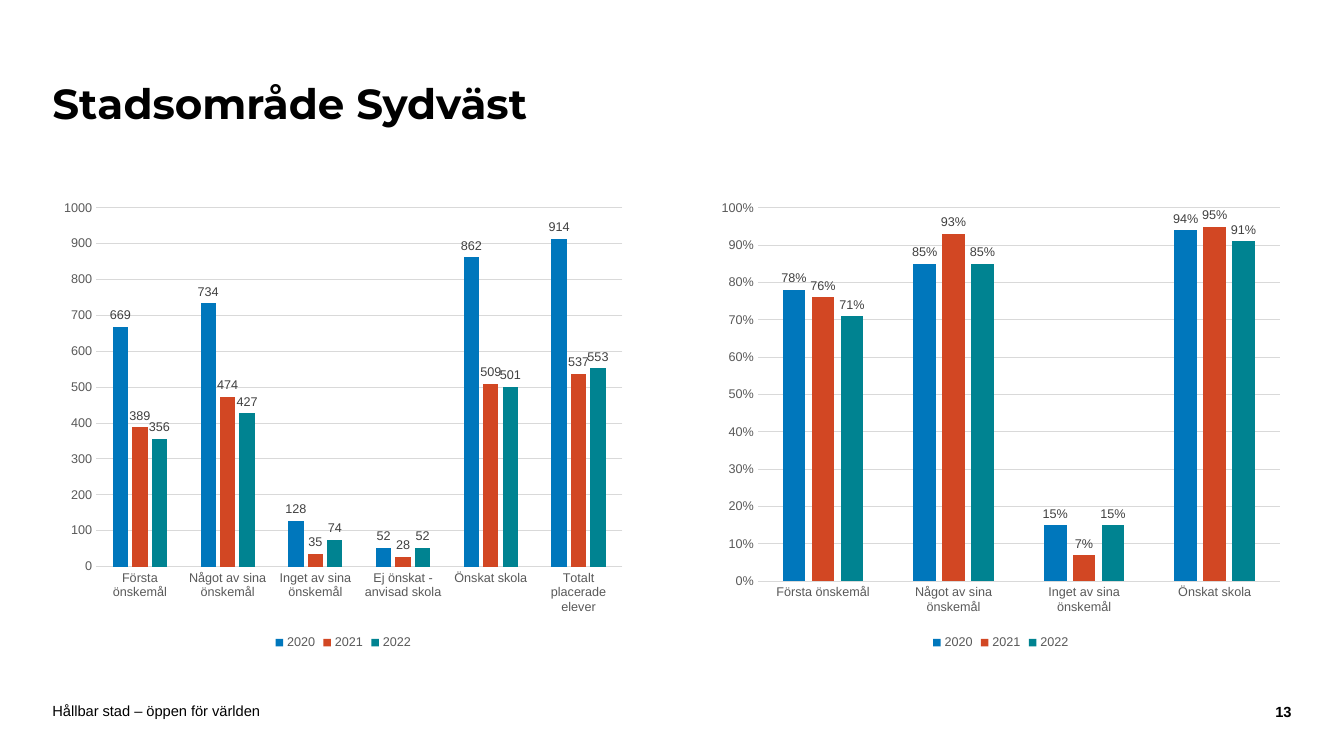
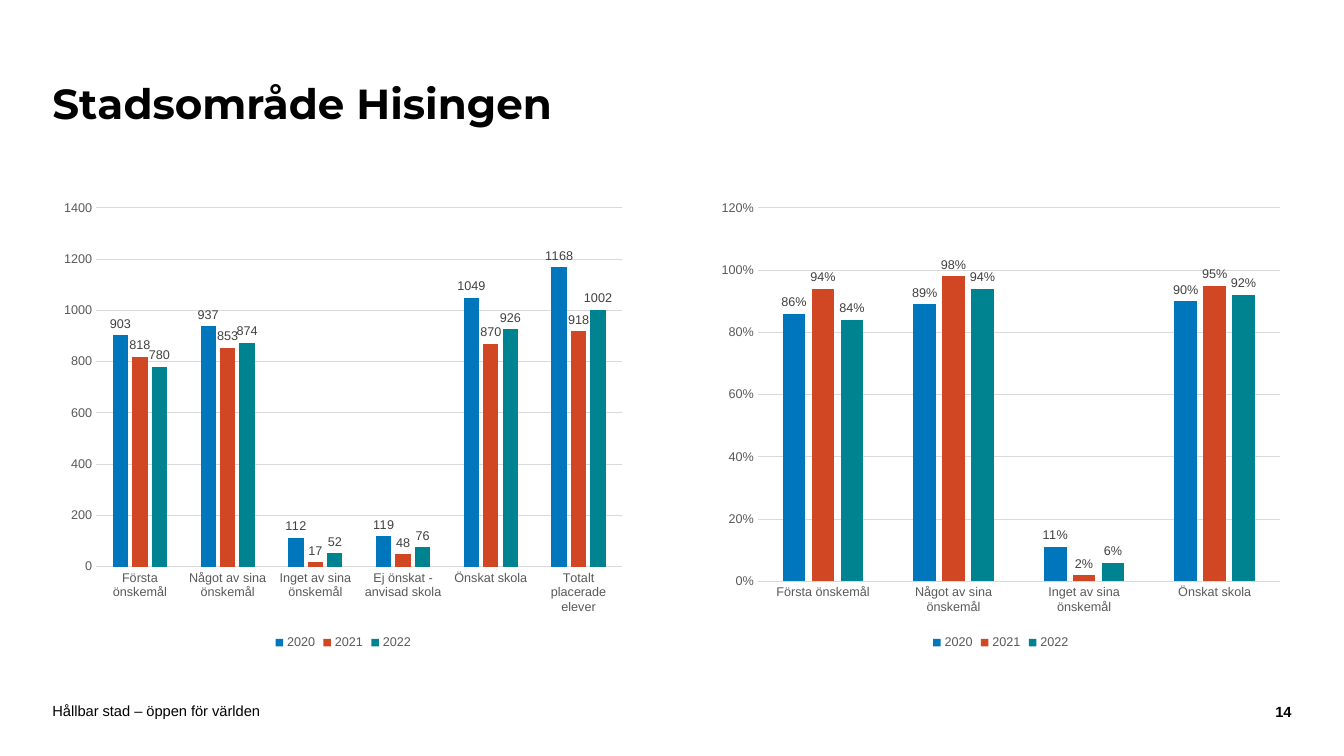
import pptx
import pptx.util
import pptx.chart.data
import pptx.dml.color
import pptx.enum.chart
import pptx.enum.text

# Shared style; lengths are percent of the slide's width or height
EDGE, GAP = 3.9, 5.64
COL = (100 - 2 * EDGE - GAP) / 2
YEARS = {"2020": "0077BC", "2021": "D24723", "2022": "008391"}
GRID = "D9D9D9"
BODY = "Arial"
TITLE = {"size": 30, "bold": True, "name": "Montserrat", "color": "000000"}
FOOT = {"size": 10.5, "bold": False, "name": BODY, "color": "000000"}
PAGE = {**FOOT, "bold": True}
AXIS = {"size": 9, "bold": False, "name": BODY, "color": "595959"}
LABEL = {**AXIS, "color": "404040"}
FOOTER = "Hållbar stad – öppen för världen"
FIRST = 13

WISHES = ["Första önskemål", "Något av sina önskemål", "Inget av sina önskemål"]
COUNTS = WISHES + ["Ej önskat - anvisad skola", "Önskat skola",
                   "Totalt placerade elever"]
SHARES = WISHES + ["Önskat skola"]

# Per slide: title, then (top of axis, step, rows by year) for each chart
AREAS = [
    ("Stadsområde Sydväst",
     (1000, 100, [[669, 734, 128, 52, 862, 914],
                  [389, 474, 35, 28, 509, 537],
                  [356, 427, 74, 52, 501, 553]]),
     (1, 0.1, [[0.78, 0.85, 0.15, 0.94],
               [0.76, 0.93, 0.07, 0.95],
               [0.71, 0.85, 0.15, 0.91]])),
    ("Stadsområde Hisingen",
     (1400, 200, [[903, 937, 112, 119, 1049, 1168],
                  [818, 853, 17, 48, 870, 918],
                  [780, 874, 52, 76, 926, 1002]]),
     (1.2, 0.2, [[0.86, 0.89, 0.11, 0.9],
                 [0.94, 0.98, 0.02, 0.95],
                 [0.84, 0.94, 0.06, 0.92]])),
]


def paint(text):
    return pptx.dml.color.RGBColor.from_string(text)


def assign(item, values):
    for key, value in values.items():
        setattr(item, key, value)


def style(font, look):
    for key, value in look.items():
        if key == "color":
            font.color.rgb = paint(value)
        else:
            setattr(font, key, pptx.util.Pt(value) if key == "size" else value)


class Deck:
    def __init__(self):
        self.file = pptx.Presentation()
        assign(self.file, {"slide_width": pptx.util.Inches(13.33),
                           "slide_height": pptx.util.Inches(7.5)})
        self.slide = None

    def place(self, left, top, width, height):
        wide, high = self.file.slide_width, self.file.slide_height
        return [round(part * full / 100) for part, full in
                zip((left, top, width, height), (wide, high, wide, high))]

    def text(self, words, look, area, align="LEFT", inset=0, lines=1):
        frame = self.slide.shapes.add_textbox(*self.place(*area)).text_frame
        pad = pptx.util.Inches(inset)
        assign(frame, {"word_wrap": True, "margin_left": 0, "margin_right": 0,
                       "margin_top": pad, "margin_bottom": pad,
                       "vertical_anchor": pptx.enum.text.MSO_ANCHOR.MIDDLE})
        line = frame.paragraphs[0]
        assign(line, {"alignment": pptx.enum.text.PP_ALIGN[align],
                      "line_spacing": lines})
        run = line.add_run()
        run.text = words
        style(run.font, look)

    def page(self, title):
        self.slide = self.file.slides.add_slide(self.file.slide_layouts[6])
        number = FIRST + len(self.file.slides) - 1
        self.text(str(number), PAGE, (100 - EDGE - 4.8, 93.1, 4.8, 2.1), "RIGHT")
        self.text(FOOTER, FOOT, (EDGE, 92.9, 70.9, 2.1))
        self.text(title, TITLE, (EDGE, 5.6, 75.2, 16.8), inset=0.05, lines=0.9)

    def chart(self, col, cats, form, top, step, rows):
        data = pptx.chart.data.CategoryChartData(number_format=form)
        data.categories = cats
        for year, row in zip(YEARS, rows):
            data.add_series(year, row)
        kinds = pptx.enum.chart
        area = self.place(EDGE + col * (COL + GAP), 25.3, COL, 61.2)
        chart = self.slide.shapes.add_chart(
            kinds.XL_CHART_TYPE.COLUMN_CLUSTERED, *area, data).chart
        style(chart.font, {**FOOT, "size": 10})
        assign(chart, {"has_title": False, "has_legend": True})
        assign(chart.legend, {"position": kinds.XL_LEGEND_POSITION.BOTTOM,
                              "include_in_layout": False})
        style(chart.legend.font, AXIS)

        # Axes and grid
        none = kinds.XL_TICK_MARK.NONE
        for axis in (chart.category_axis, chart.value_axis):
            assign(axis, {"major_tick_mark": none, "minor_tick_mark": none})
            style(axis.tick_labels.font, AXIS)
        value = chart.value_axis
        assign(value, {"minimum_scale": 0, "maximum_scale": top,
                       "major_unit": step, "has_major_gridlines": True})
        assign(value.tick_labels, {"number_format": form,
                                   "number_format_is_linked": False})
        value.format.line.fill.background()
        for part in (chart.category_axis, value.major_gridlines):
            part.format.line.color.rgb = paint(GRID)
            part.format.line.width = pptx.util.Pt(0.75)

        # Bars and their labels
        plot = chart.plots[0]
        assign(plot, {"gap_width": 219, "overlap": -27,
                      "vary_by_categories": False})
        for bar, color in zip(plot.series, YEARS.values()):
            bar.format.fill.solid()
            bar.format.fill.fore_color.rgb = paint(color)
            bar.invert_if_negative = False
            assign(bar.data_labels, {
                "show_value": True, "number_format": form,
                "number_format_is_linked": False,
                "position": kinds.XL_LABEL_POSITION.OUTSIDE_END})
            style(bar.data_labels.font, LABEL)


def main():
    deck = Deck()
    for title, counts, shares in AREAS:
        deck.page(title)
        deck.chart(0, COUNTS, "General", *counts)
        deck.chart(1, SHARES, "0%", *shares)
    deck.file.save("out.pptx")


if __name__ == "__main__":
    main()
